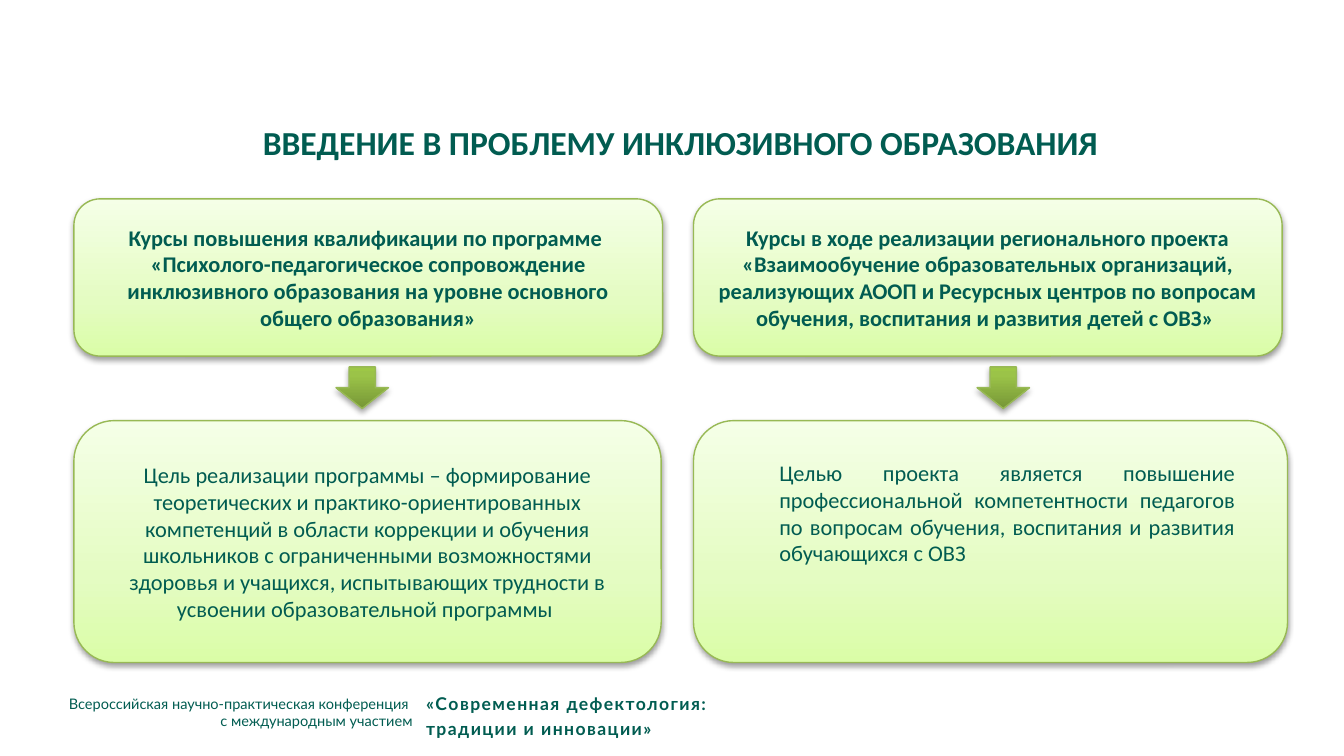
from lxml import etree
from pptx import Presentation
from pptx.dml.color import RGBColor
from pptx.enum.shapes import MSO_SHAPE
from pptx.enum.text import MSO_ANCHOR, MSO_AUTO_SIZE, PP_ALIGN
from pptx.oxml.ns import qn
from pptx.util import Inches, Pt

ROUND = MSO_SHAPE.ROUNDED_RECTANGLE
ARROW = MSO_SHAPE.DOWN_ARROW
TOP, MIDDLE = MSO_ANCHOR.TOP, MSO_ANCHOR.MIDDLE
LEFT, RIGHT = PP_ALIGN.LEFT, PP_ALIGN.RIGHT
CENTER, JUSTIFY = PP_ALIGN.CENTER, PP_ALIGN.JUSTIFY
FIXED = MSO_AUTO_SIZE.NONE

GREEN = "015C51"
EDGE = "98B955"
PALE = [(0, "DAFDA7"), (35, "E4FCC2"), (100, "F5FFE7")]
DEEP = [(0, "779737"), (80, "9BC348"), (100, "9DC746")]

HEAD = "ВВЕДЕНИЕ В ПРОБЛЕМУ ИНКЛЮЗИВНОГО ОБРАЗОВАНИЯ"
COURSE = (
    "Курсы повышения квалификации по программе \n"
    "«Психолого-педагогическое сопровождение инклюзивного образования "
    "на уровне основного общего образования»"
)
PROJECT = (
    "Курсы в ходе реализации регионального проекта «Взаимообучение "
    "образовательных организаций, реализующих АООП и Ресурсных центров "
    "по вопросам обучения, воспитания и развития детей с ОВЗ» "
)
COURSE_GOAL = (
    "Цель реализации программы – формирование теоретических и "
    "практико-ориентированных компетенций в области коррекции и обучения "
    "школьников с ограниченными возможностями здоровья и учащихся, "
    "испытывающих трудности в усвоении образовательной программы "
)
PROJECT_GOAL = (
    "Целью проекта является повышение профессиональной компетентности "
    "педагогов по вопросам обучения, воспитания и развития обучающихся с ОВЗ"
)
EVENT = "Всероссийская научно-практическая конференция \vс международным участием"
THEME = "«Cовременная дефектология:\nтрадиции и инновации»"


def color(code):
    return RGBColor.from_string(code)


def place(shape, *area):
    shape.left, shape.top, shape.width, shape.height = map(Inches, area)


def write(shape, text, size, align, anchor=TOP, font="Calibri", bold=False):
    frame = shape.text_frame
    frame.word_wrap = True
    frame.auto_size = FIXED
    frame.vertical_anchor = anchor
    frame.text = text
    for par in frame.paragraphs:
        par.alignment = align
        for run in par.runs:
            run.font.name = font
            run.font.size = Pt(size)
            run.font.bold = bold
            run.font.color.rgb = color(GREEN)
    return frame


def add_text(slide, area, *args, **style):
    box = slide.shapes.add_textbox(*map(Inches, area))
    return write(box, *args, **style)


def shade(shape, stops):
    shape.fill.gradient()
    shape.fill.gradient_angle = 90
    items = shape._element.spPr.find(".//" + qn("a:gsLst"))
    for item in list(items):
        items.remove(item)
    for pos, code in stops:
        stop = etree.SubElement(items, qn("a:gs"), pos=str(pos * 1000))
        etree.SubElement(stop, qn("a:srgbClr"), val=code)


def cast(shape, dist, alpha):
    shape.shadow.inherit = False
    effects = shape._element.spPr.find(qn("a:effectLst"))
    drop = etree.SubElement(
        effects, qn("a:outerShdw"), blurRad=str(Pt(3.1)), dist=str(Pt(dist)),
        dir="5400000", rotWithShape="0",
    )
    tint = etree.SubElement(drop, qn("a:srgbClr"), val="000000")
    etree.SubElement(tint, qn("a:alpha"), val=str(alpha * 1000))


def add_form(slide, kind, area, stops, dist, alpha):
    shape = slide.shapes.add_shape(kind, *map(Inches, area))
    shade(shape, stops)
    shape.line.color.rgb = color(EDGE)
    shape.line.width = Pt(0.75)
    cast(shape, dist, alpha)
    return shape


def add_card(slide, *area):
    return add_form(slide, ROUND, area, PALE, 1.6, 38)


def add_arrow(slide, left):
    add_form(slide, ARROW, (left, 2.73, 0.39, 0.31), DEEP, 1.8, 35)


def add_footer(slide):
    add_text(slide, (0, 5.12, 3.17, 0.36), EVENT, 7.8, RIGHT, font="Lato")
    frame = add_text(slide, (3.17, 5.13, 4.82, 0.37), THEME, 9.4, LEFT,
                     font="Lato", bold=True)
    frame.margin_left = frame.margin_right = frame.margin_bottom = 0
    frame.margin_top = Inches(0.03)
    frame.paragraphs[1].space_before = Pt(1.9)
    for par in frame.paragraphs:
        for run in par.runs:
            run._r.get_or_add_rPr().set("spc", "80")


def main():
    deck = Presentation()
    deck.slide_width = Inches(10)
    deck.slide_height = deck.slide_width * 9 // 16
    slide = deck.slides.add_slide(deck.slide_layouts[5])

    title = slide.shapes.title
    place(title, 0.55, 0.86, 9.03, 0.54)
    write(title, HEAD, 18, CENTER, bold=True)

    for left, text in ((0.55, COURSE), (5.16, PROJECT)):
        card = add_card(slide, left, 1.48, 4.38, 1.17)
        write(card, text, 12, CENTER, MIDDLE, bold=True)

    goal = add_card(slide, 0.55, 3.13, 4.37, 1.8)
    write(goal, COURSE_GOAL, 12, CENTER, MIDDLE)
    add_card(slide, 5.16, 3.13, 4.42, 1.8)
    add_text(slide, (5.7, 3.36, 3.59, 0.91), PROJECT_GOAL, 12, JUSTIFY, MIDDLE)

    for left in (2.5, 7.27):
        add_arrow(slide, left)
    add_footer(slide)
    deck.save("out.pptx")


if __name__ == "__main__":
    main()
